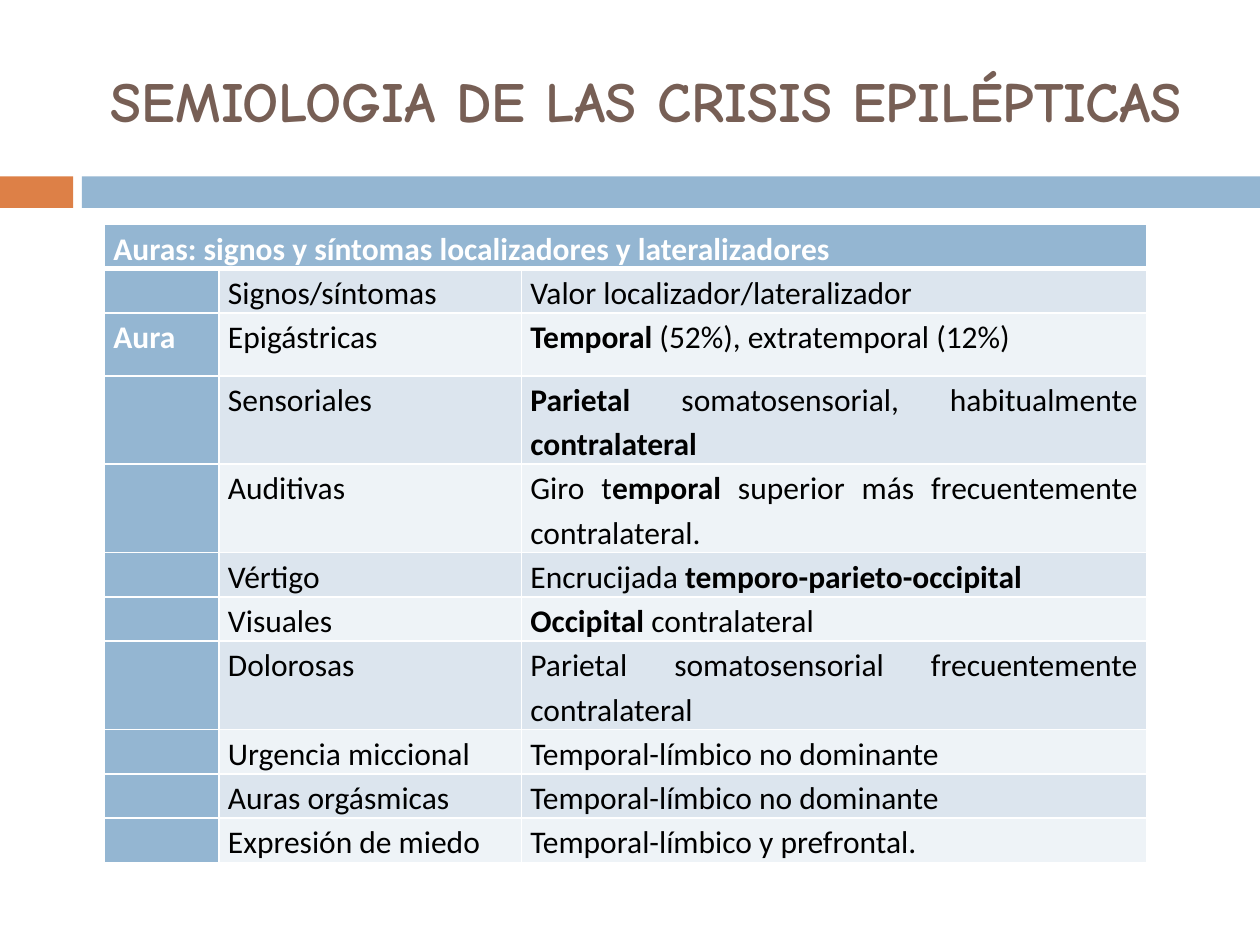
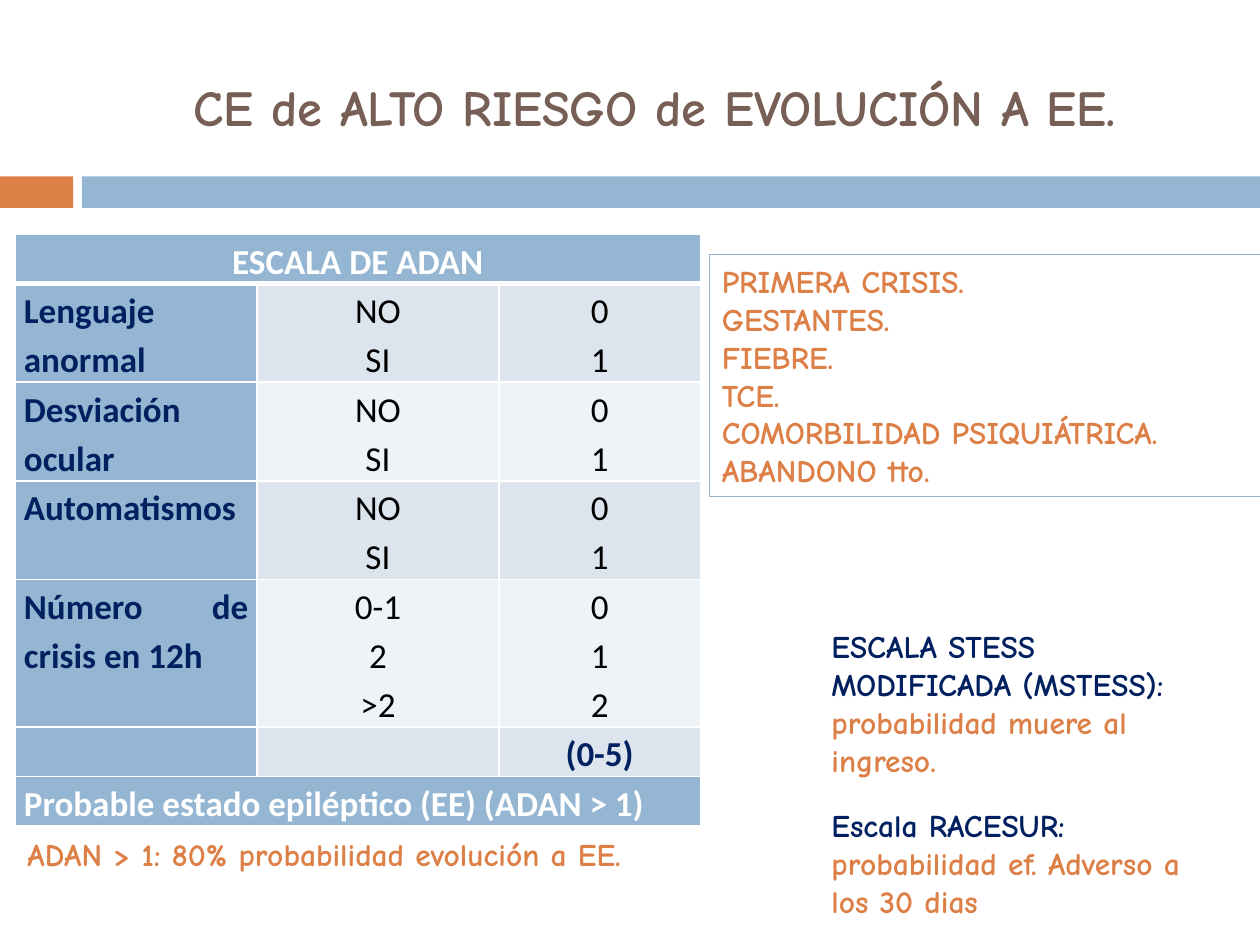
from pptx import Presentation
from pptx.dml.color import RGBColor
from pptx.enum.shapes import MSO_SHAPE
from pptx.enum.text import MSO_ANCHOR, MSO_AUTO_SIZE, PP_ALIGN
from pptx.oxml import parse_xml
from pptx.oxml.ns import nsdecls
from pptx.util import Inches, Pt

BLUE, ORANGE, BROWN, NAVY = "94B6D2", "DD8047", "775F55", "002060"
WHITE, BLACK = "FFFFFF", "000000"
STRIPES = ("DCE5EE", "EEF3F7")
HEADING_FONT, TABLE_FONT = "Comic Neue", "Calibri"
LEFT, CENTER, JUSTIFY = PP_ALIGN.LEFT, PP_ALIGN.CENTER, PP_ALIGN.JUSTIFY

AURAS = [
    ("Auras: signos y síntomas localizadores y lateralizadores", "", ""),
    ("", "Signos/síntomas", "Valor localizador/lateralizador"),
    ("Aura", "Epigástricas", "*Temporal* (52%), extratemporal (12%)"),
    ("", "Sensoriales", "*Parietal *somatosensorial, habitualmente *contralateral*"),
    ("", "Auditivas", "Giro t*emporal* superior más frecuentemente contralateral."),
    ("", "Vértigo", "Encrucijada *temporo-parieto-occipital*"),
    ("", "Visuales", "*Occipital* contralateral"),
    ("", "Dolorosas", "Parietal somatosensorial frecuentemente contralateral"),
    ("", "Urgencia miccional", "Temporal-límbico no dominante"),
    ("", "Auras orgásmicas", "Temporal-límbico no dominante"),
    ("", "Expresión de miedo", "Temporal-límbico y prefrontal."),
]
ADAN = [
    ("ESCALA DE ADAN", "", ""),
    ("Lenguaje anormal", "NO\nSI", "0\n1"),
    ("Desviación ocular", "NO\nSI", "0\n1"),
    ("Automatismos", "NO\nSI", "0\n1"),
    ("Número de crisis en 12h", "0-1\n2\n>2", "0\n1\n2"),
    ("", "", "(0-5)"),
    ("Probable estado epiléptico (EE) (ADAN > 1)", "", ""),
]
RISK_GROUPS = ["PRIMERA CRISIS.", "GESTANTES.", "FIEBRE.", "TCE.",
               "COMORBILIDAD PSIQUIÁTRICA.", "ABANDONO tto."]


def rgb(color):
    return RGBColor.from_string(color)


def inches(box):
    return [Inches(length) for length in box]


def set_all(target, **values):
    for name, value in values.items():
        setattr(target, name, value)


def add_run(paragraph, text, size, color, bold=True, font=HEADING_FONT):
    run = paragraph.add_run()
    run.text = text
    set_all(run.font, name=font, size=Pt(size), bold=bold)
    run.font.color.rgb = rgb(color)


def add_bands(slide):
    for left, width, color in ((0, 0.58, ORANGE), (0.65, 9.35, BLUE)):
        band = slide.shapes.add_shape(MSO_SHAPE.RECTANGLE, *inches((left, 1.4, width, 0.25)))
        band.shadow.inherit = False
        band.fill.solid()
        band.fill.fore_color.rgb = rgb(color)
        band.line.fill.background()


def start_slide(deck, heading, box, size):
    slide = deck.slides.add_slide(deck.slide_layouts[5])
    add_bands(slide)
    title = slide.shapes.title
    set_all(title, **dict(zip(("left", "top", "width", "height"), inches(box))))
    set_all(title.text_frame, word_wrap=True, auto_size=MSO_AUTO_SIZE.NONE,
            vertical_anchor=MSO_ANCHOR.MIDDLE)
    paragraph = title.text_frame.paragraphs[0]
    paragraph.alignment = CENTER
    add_run(paragraph, heading, size, BROWN)
    return slide


def set_borders(cell, top, bottom):
    properties = cell._tc.get_or_add_tcPr()
    for side, width in (("L", 1), ("R", 1), ("T", top), ("B", bottom)):
        properties.append(parse_xml(
            f'<a:ln{side} {nsdecls("a")} w="{Pt(width)}"><a:solidFill>'
            f'<a:srgbClr val="{WHITE}"/></a:solidFill></a:ln{side}>'))


def fill_cell(cell, text, fill, size, color, bold, alignment):
    set_all(cell, margin_left=Inches(0.07), margin_right=Inches(0.07),
            margin_top=0, margin_bottom=0)
    cell.fill.solid()
    cell.fill.fore_color.rgb = rgb(fill)
    for index, line in enumerate(text.split("\n")):
        frame = cell.text_frame
        paragraph = frame.add_paragraph() if index else frame.paragraphs[0]
        set_all(paragraph, alignment=alignment, line_spacing=1.15)
        for part, words in enumerate(line.split("*")):
            if words:
                add_run(paragraph, words, size, color, bold or part % 2 == 1, TABLE_FONT)


def add_scale(slide, rows, box, widths, heights, size, style_of, full_rows):
    table = slide.shapes.add_table(len(rows), len(widths), *inches(box)).table
    set_all(table, first_row=False, horz_banding=False)
    for column, width in zip(table.columns, widths):
        column.width = Inches(width)
    for r, (row, height) in enumerate(zip(rows, heights)):
        table.rows[r].height = Inches(height)
        for c, text in enumerate(row):
            cell = table.cell(r, c)
            set_borders(cell, 3 if r == 1 else 1, 3 if r == 0 else 1)
            accent = c == 0 or r in full_rows
            fill = BLUE if accent else STRIPES[(r - 1) % 2]
            fill_cell(cell, text, fill, size, *style_of(r, c))
    for r in full_rows:
        table.cell(r, 0).merge(table.cell(r, len(widths) - 1))


def aura_style(r, c):
    accent = r == 0 or c == 0
    return WHITE if accent else BLACK, accent, JUSTIFY


def adan_style(r, c):
    if r in (0, 6):
        return WHITE, True, JUSTIFY if r else CENTER
    if c == 0 or r == 5:
        return NAVY, True, CENTER if c else JUSTIFY
    return BLACK, False, CENTER


def add_note(slide, box, paragraphs, framed=False):
    if framed:
        note = slide.shapes.add_shape(MSO_SHAPE.RECTANGLE, *inches(box))
        note.shadow.inherit = False
        note.fill.background()
        note.line.color.rgb = rgb(BLUE)
        note.line.width = Pt(0.75)
    else:
        note = slide.shapes.add_textbox(*inches(box))
    frame = note.text_frame
    set_all(frame, word_wrap=True, auto_size=MSO_AUTO_SIZE.SHAPE_TO_FIT_TEXT)
    for index, runs in enumerate(paragraphs):
        paragraph = frame.add_paragraph() if index else frame.paragraphs[0]
        paragraph.alignment = LEFT
        for text, color in runs:
            add_run(paragraph, text, 18, color)


def build_auras(deck):
    slide = start_slide(deck, "SEMIOLOGIA DE LAS CRISIS EPILÉPTICAS",
                        (0.67, 0.25, 8.92, 1.08), 32.4)
    heights = [0.5 if r == 2 else 0.69 if r in (3, 4, 7) else 0.34
               for r in range(len(AURAS))]
    add_scale(slide, AURAS, (0.83, 1.78, 8.27, 4.99), (0.91, 2.4, 4.96),
              heights, 18, aura_style, (0,))


def build_high_risk(deck):
    slide = start_slide(deck, "CE de ALTO RIESGO de EVOLUCIÓN A EE.",
                        (0.67, 0.36, 9.05, 0.97), 28.8)
    heights = [0.39 * lines for lines in (1, 2, 2, 2, 3, 1, 1)]
    add_scale(slide, ADAN, (0.12, 1.86, 5.43, 4.6), (1.92, 1.92, 1.6),
              heights, 20, adan_style, (0, 6))
    add_note(slide, (0.12, 6.58, 5.83, 0.4),
             [[("ADAN > 1: 80% probabilidad evolución a EE.", ORANGE)]])
    add_note(slide, (6.5, 4.93, 3.31, 1.31),
             [[("ESCALA STESS MODIFICADA (MSTESS): ", NAVY),
               ("probabilidad muere al ingreso.", ORANGE)]])
    add_note(slide, (6.5, 6.35, 2.99, 1.01),
             [[("Escala RACESUR: ", NAVY),
               ("probabilidad ef. Adverso a los 30 dias", ORANGE)]])
    add_note(slide, (5.63, 2.02, 4.49, 1.92),
             [[(group, ORANGE)] for group in RISK_GROUPS], framed=True)


def main():
    deck = Presentation()
    set_all(deck, slide_width=Inches(10), slide_height=Inches(7.5))
    build_auras(deck)
    build_high_risk(deck)
    deck.save("out.pptx")


if __name__ == "__main__":
    main()
